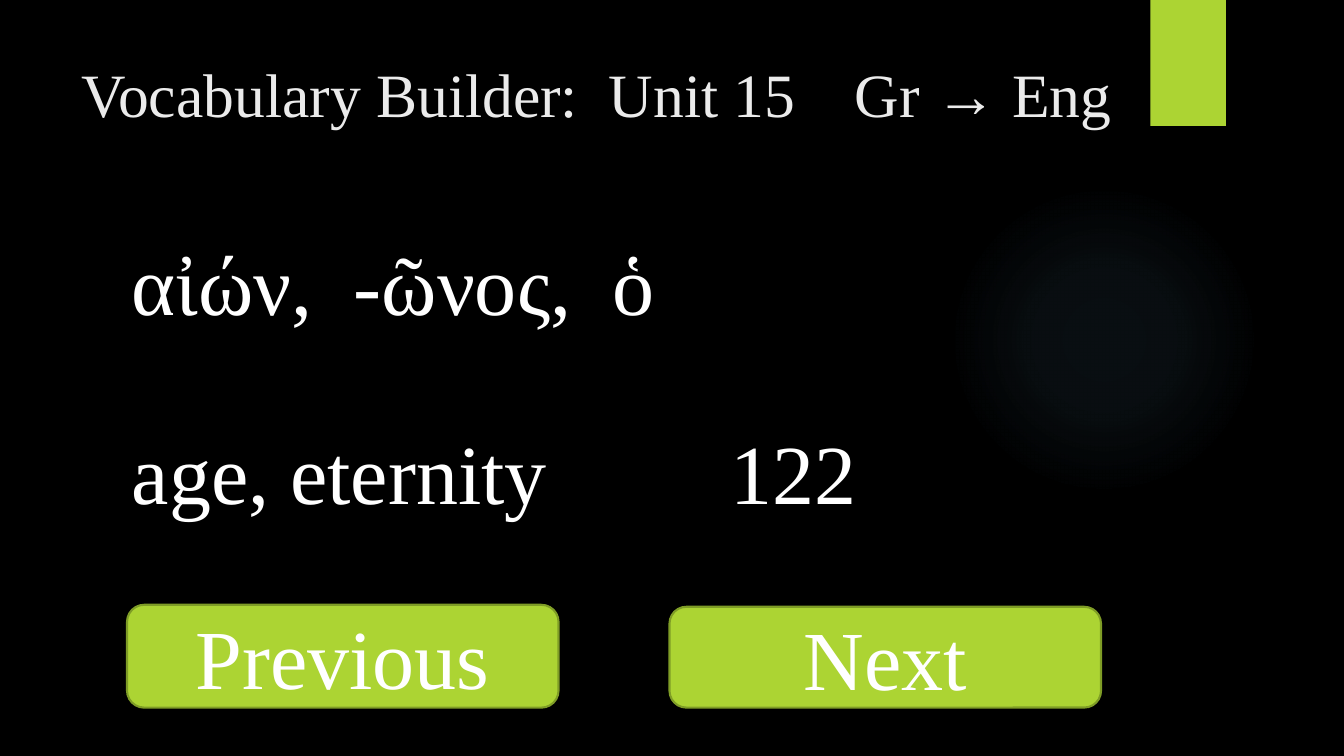
from lxml import etree
from pptx import Presentation
from pptx.dml.color import RGBColor
from pptx.enum import shapes, text
from pptx.oxml import parse_xml
from pptx.oxml.ns import nsdecls, qn
from pptx.util import Inches, Pt

BLACK = RGBColor(0x00, 0x00, 0x00)
WHITE = RGBColor(0xFF, 0xFF, 0xFF)
LIGHT_GRAY = RGBColor(0xEB, 0xEB, 0xEB)
LIME = RGBColor(0xAC, 0xD4, 0x33)
DARK_LIME = RGBColor(0x7F, 0x9D, 0x26)
GLOW_BLUE = RGBColor(0x7A, 0xC4, 0xF0)
GLOW_STOPS = ((0, 7), (36, 6), (69, 0), (100, 0))  # position and opacity, percent


def write_line(shape, words, size=60, color=WHITE, tabs=(),
               align=text.PP_ALIGN.LEFT, anchor=text.MSO_ANCHOR.TOP):
    """Put one formatted line in a shape; tabs are tab stops in inches."""
    frame = shape.text_frame
    frame_format = {"word_wrap": True, "auto_size": text.MSO_AUTO_SIZE.NONE,
                    "vertical_anchor": anchor}
    for name, value in frame_format.items():
        setattr(frame, name, value)
    paragraph = frame.paragraphs[0]
    paragraph.text = words
    paragraph.alignment = align
    if tabs:
        tab_list = etree.SubElement(paragraph._p.get_or_add_pPr(), qn("a:tabLst"))
        for position in tabs:
            etree.SubElement(tab_list, qn("a:tab"), pos=str(Inches(position)), algn="l")
    for run in paragraph.runs:
        for name, value in {"name": "Times New Roman", "size": Pt(size)}.items():
            setattr(run.font, name, value)
        run.font.color.rgb = color


def add_filled_shape(slide, kind, left, top, width, height, fill=LIME):
    shape = slide.shapes.add_shape(
        kind, Inches(left), Inches(top), Inches(width), Inches(height))
    shape.shadow.inherit = False
    shape.fill.solid()
    shape.fill.fore_color.rgb = fill
    shape.line.fill.background()
    return shape


def add_glow(slide):
    """Add the faint round light that fades towards its edge."""
    glow = add_filled_shape(slide, shapes.MSO_SHAPE.OVAL, 9.41, 1.83, 3.08, 3.08, GLOW_BLUE)
    stops = "".join(
        f'<a:gs pos="{position * 1000}"><a:srgbClr val="{GLOW_BLUE}">'
        f'<a:alpha val="{opacity * 1000}"/></a:srgbClr></a:gs>'
        for position, opacity in GLOW_STOPS)
    gradient = parse_xml(
        f'<a:gradFill {nsdecls("a")}><a:gsLst>{stops}</a:gsLst><a:path path="circle">'
        '<a:fillToRect l="50000" t="50000" r="50000" b="50000"/></a:path></a:gradFill>')
    properties = glow._element.spPr
    properties.replace(properties.find(qn("a:solidFill")), gradient)


def add_entry(slide, words, top, width, height, tabs):
    box = slide.shapes.add_textbox(
        Inches(1.21), Inches(top), Inches(width), Inches(height))
    write_line(box, words, tabs=tabs)


def add_button(slide, label, left, top, height):
    button = add_filled_shape(
        slide, shapes.MSO_SHAPE.ROUNDED_RECTANGLE, left, top, 4.28, height)
    button.line.color.rgb = DARK_LIME
    button.line.width = Pt(1.5)
    write_line(button, label, align=text.PP_ALIGN.CENTER, anchor=text.MSO_ANCHOR.MIDDLE)


def place_title(slide):
    title = slide.shapes.title
    bounds = {"left": 0.71, "top": 0.5, "width": 10.83, "height": 0.96}
    for name, value in bounds.items():
        setattr(title, name, Inches(value))
    write_line(title, "Vocabulary Builder:\tUnit 15\tGr → Eng", 44, LIGHT_GRAY, (5.23, 7.67))


def main():
    presentation = Presentation()
    presentation.slide_width = Inches(13.33)
    presentation.slide_height = Inches(7.5)
    slide = presentation.slides.add_slide(presentation.slide_layouts.get_by_name("Title Only"))
    slide.background.fill.solid()
    slide.background.fill.fore_color.rgb = BLACK

    add_glow(slide)
    add_filled_shape(slide, shapes.MSO_SHAPE.RECTANGLE, 11.41, 0, 0.75, 1.25)
    add_entry(slide, "αἰών,\t-ῶνος,\tὁ", 2.25, 9.78, 1.55, (2.2, 4.77))
    add_entry(slide, "age, eternity\t122", 4.12, 7.52, 1.11, (5.94,))
    add_button(slide, "Previous", 1.26, 6, 1.02)
    add_button(slide, "Next", 6.64, 6.02, 1)
    place_title(slide)
    presentation.save("out.pptx")


if __name__ == "__main__":
    main()
